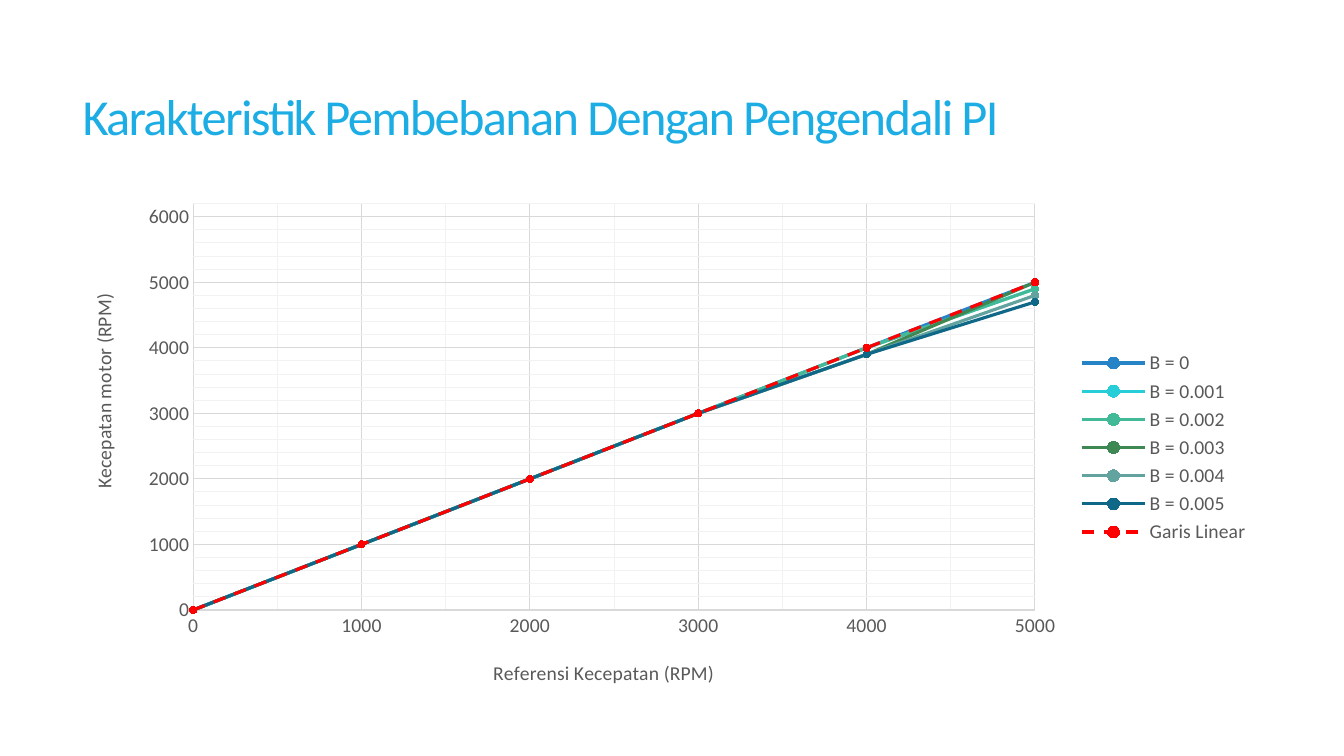
import pptx
import pptx.chart.data
import pptx.dml.color
import pptx.enum.chart
import pptx.enum.dml
import pptx.enum.text
import pptx.oxml
import pptx.oxml.ns
import pptx.util

Inches = pptx.util.Inches
Pt = pptx.util.Pt
RGBColor = pptx.dml.color.RGBColor
qn = pptx.oxml.ns.qn

FONT = "Calibri"
TITLE_BLUE = RGBColor(0x1C, 0xAD, 0xE4)
TEXT_GRAY = RGBColor(0x59, 0x59, 0x59)
GRID_GRAY = RGBColor(0xD9, 0xD9, 0xD9)
MINOR_GRID_GRAY = RGBColor(0xF2, 0xF2, 0xF2)
LINEAR_RED = RGBColor(0xFF, 0x00, 0x00)

REFERENCE_SPEEDS = [0, 1000, 2000, 3000, 4000, 5000]
SHARED_SPEEDS = REFERENCE_SPEEDS[:4]
# Name, motor speed at the last two references, colour
SERIES = [
    ("B = 0", [4000, 5000], RGBColor(0x26, 0x83, 0xC6)),
    ("B = 0.001", [4000, 4900], RGBColor(0x27, 0xCE, 0xD7)),
    ("B = 0.002", [4000, 4900], RGBColor(0x42, 0xBA, 0x97)),
    ("B = 0.003", [3900, 5000], RGBColor(0x3E, 0x88, 0x53)),
    ("B = 0.004", [3900, 4800], RGBColor(0x62, 0xA3, 0x9F)),
    ("B = 0.005", [3900, 4700], RGBColor(0x10, 0x68, 0x89)),
    ("Garis Linear", [4000, 5000], LINEAR_RED),
]


def style_font(font, size, color):
    font.name = FONT
    font.size = Pt(size)
    font.bold = False
    font.color.rgb = color


def add_title(slide, left, top, width, height):
    text_box = slide.shapes.add_textbox(left, top, width, height)
    text_frame = text_box.text_frame
    text_frame.word_wrap = True
    text_frame.vertical_anchor = pptx.enum.text.MSO_ANCHOR.MIDDLE
    text_frame.text = "Karakteristik Pembebanan Dengan Pengendali PI"
    paragraph = text_frame.paragraphs[0]
    paragraph.line_spacing = 0.85
    run = paragraph.runs[0]
    style_font(run.font, 36, TITLE_BLUE)
    run.font._element.set("spc", "-120")


def set_layout(element, **fractions):
    """Fix the place of a chart part, in fractions of the chart."""
    layout = element.find(qn("c:layout"))
    if layout is None:
        layout = pptx.oxml.parse_xml(f"<c:layout {pptx.oxml.ns.nsdecls('c')}/>")
        element.insert(0, layout)
    manual = layout.makeelement(qn("c:manualLayout"), {})
    layout.append(manual)
    settings = {"xMode": "edge", "yMode": "edge", **fractions}
    if "w" in fractions:
        settings = {"layoutTarget": "inner", **settings}
    for name, value in settings.items():
        manual.append(manual.makeelement(qn(f"c:{name}"), {"val": str(value)}))


def style_axis(axis, title, x, y):
    axis.has_major_gridlines = True
    axis.has_minor_gridlines = True
    axis.major_tick_mark = pptx.enum.chart.XL_TICK_MARK.NONE
    axis.minor_tick_mark = pptx.enum.chart.XL_TICK_MARK.NONE
    grid_line = axis.major_gridlines.format.line
    grid_line.color.rgb = GRID_GRAY
    grid_line.width = Pt(0.75)
    minor_gridlines = axis._element.find(qn("c:minorGridlines"))
    minor_gridlines.append(pptx.oxml.parse_xml(
        f'<c:spPr {pptx.oxml.ns.nsdecls("c", "a")}><a:ln w="{Pt(0.75)}"><a:solidFill>'
        f'<a:srgbClr val="{MINOR_GRID_GRAY}"/></a:solidFill></a:ln></c:spPr>'))
    style_font(axis.tick_labels.font, 14, TEXT_GRAY)
    text_frame = axis.axis_title.text_frame
    text_frame.text = title
    style_font(text_frame.paragraphs[0].runs[0].font, 14, TEXT_GRAY)
    set_layout(axis.axis_title._element, x=x, y=y)


def start_lines_on_axis(value_axis):
    """Put the categories on the tick marks instead of between them."""
    crosses = value_axis._element.find(qn("c:crosses"))
    crosses.addnext(crosses.makeelement(qn("c:crossBetween"), {"val": "midCat"}))


def style_series(series, color):
    series.smooth = False
    series.format.line.color.rgb = color
    series.format.line.width = Pt(2.25)
    if color == LINEAR_RED:
        series.format.line.dash_style = pptx.enum.dml.MSO_LINE.DASH
    marker = series.marker
    marker.style = pptx.enum.chart.XL_MARKER_STYLE.CIRCLE
    marker.size = 5
    marker.format.fill.solid()
    marker.format.fill.fore_color.rgb = color
    marker.format.line.color.rgb = color


def add_speed_chart(slide, left, top, width, height):
    data = pptx.chart.data.CategoryChartData()
    data.categories = [str(speed) for speed in REFERENCE_SPEEDS]
    for name, last_speeds, _ in SERIES:
        data.add_series(name, SHARED_SPEEDS + last_speeds)
    chart = slide.shapes.add_chart(
        pptx.enum.chart.XL_CHART_TYPE.LINE_MARKERS, left, top, width, height, data).chart
    chart.has_title = False
    style_font(chart.font, 14, TEXT_GRAY)
    chart.has_legend = True
    chart.legend.position = pptx.enum.chart.XL_LEGEND_POSITION.RIGHT
    chart.legend.include_in_layout = False
    style_font(chart.legend.font, 14, TEXT_GRAY)

    plot = chart.plots[0]
    plot.vary_by_categories = False
    for series, (_, _, color) in zip(plot.series, SERIES):
        style_series(series, color)

    style_axis(chart.category_axis, "Referensi Kecepatan (RPM)", 0.35, 0.91)
    chart.category_axis.format.line.color.rgb = GRID_GRAY
    chart.category_axis.format.line.width = Pt(0.75)
    value_axis = chart.value_axis
    style_axis(value_axis, "Kecepatan motor (RPM)", 0.01, 0.19)
    value_axis.format.line.fill.background()
    value_axis.minimum_scale = 0
    value_axis.maximum_scale = 6200
    value_axis.major_unit = 1000
    value_axis.minor_unit = 200
    start_lines_on_axis(value_axis)
    plot_area = chart._chartSpace.find(f".//{qn('c:plotArea')}")
    set_layout(plot_area, x=0.1, y=0.02, w=0.71, h=0.8)


def main():
    presentation = pptx.Presentation()
    presentation.slide_width = Inches(13.33)
    presentation.slide_height = Inches(7.5)
    slide = presentation.slides.add_slide(presentation.slide_layouts[6])
    add_title(slide, Inches(0.72), Inches(0.55), Inches(11.78), Inches(1.29))
    add_speed_chart(slide, Inches(0.74), Inches(1.92), Inches(11.76), Inches(5.04))
    presentation.save("out.pptx")


if __name__ == "__main__":
    main()
